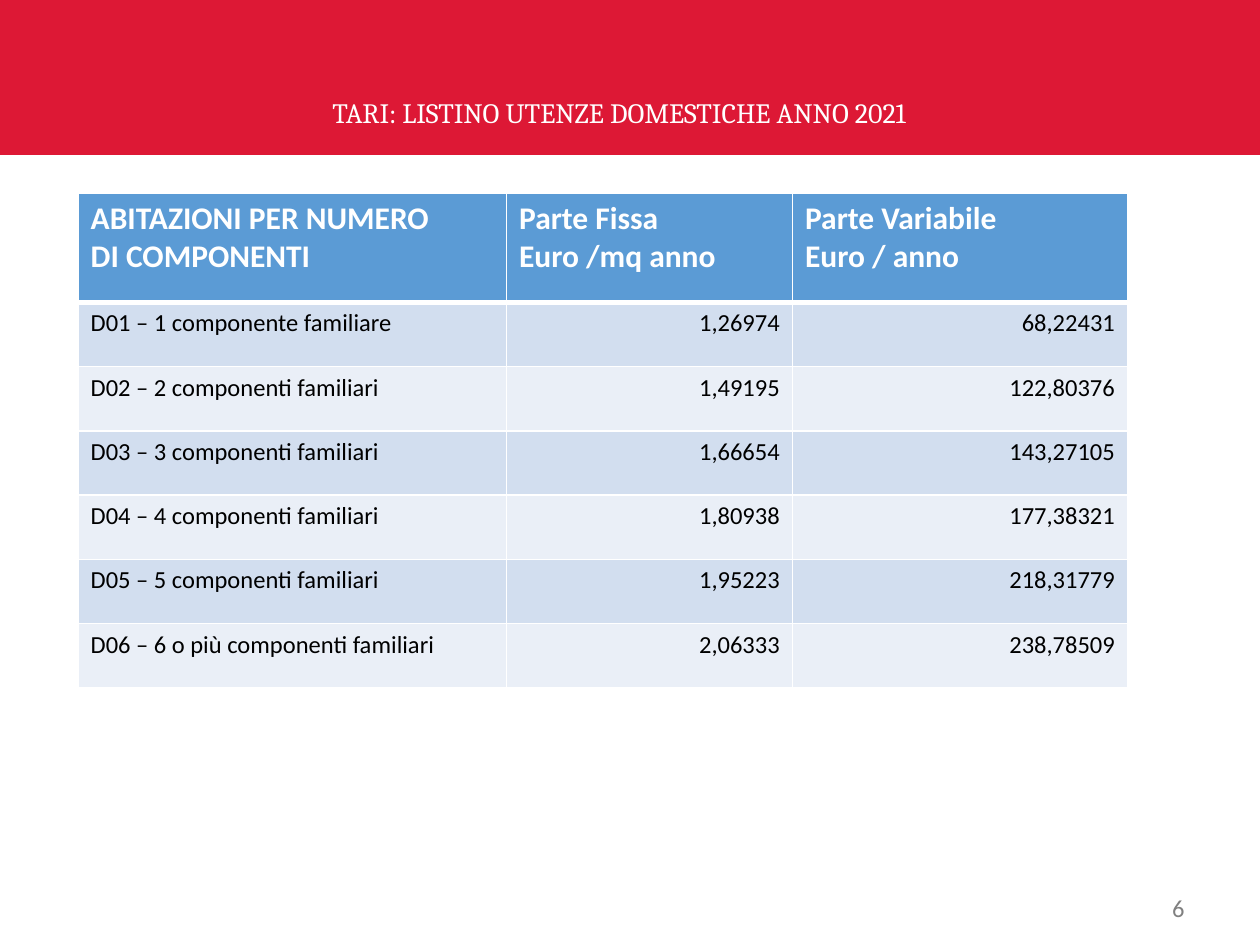
from lxml import etree
from pptx import Presentation
from pptx import util as u
from pptx.dml.color import RGBColor
from pptx.enum import shapes, text
from pptx.oxml.ns import qn

COLORS = {
    "banner": "DD1835", "white": "FFFFFF", "number": "808080",
    "header": "5B9BD5", "odd": "D2DEEF", "even": "EAEFF7", "ink": "000000",
}
WIDTH, HEIGHT = 10, 7.5
TITLE = "TARI: LISTINO UTENZE DOMESTICHE ANNO 2021"
PAGE_NUMBER = "6"
HEADERS = [
    ["ABITAZIONI PER NUMERO", "DI COMPONENTI"],
    ["Parte Fissa", "Euro /mq anno"],
    ["Parte Variabile", "Euro / anno"],
]
RATES = [
    ("D01 – 1 componente familiare", "1,26974", "68,22431"),
    ("D02 – 2 componenti familiari", "1,49195", "122,80376"),
    ("D03 – 3 componenti familiari", "1,66654", "143,27105"),
    ("D04 – 4 componenti familiari", "1,80938", "177,38321"),
    ("D05 – 5 componenti familiari", "1,95223", "218,31779"),
    ("D06 – 6 o più componenti familiari", "2,06333", "238,78509"),
]
COLUMN_WIDTHS = [3.4, 2.27, 2.66]
ROW_HEIGHTS = [0.87] + [0.51] * len(RATES)
TABLE_LEFT, TABLE_TOP = 0.62, 1.53
ALIGN = text.PP_ALIGN
FORMATS = {
    "title": {"name": "Cambria", "size": u.Pt(16), "color": "white"},
    "number": {"name": "Calibri", "size": u.Pt(14), "color": "number"},
    "header": {"name": "Calibri", "size": u.Pt(18), "bold": True, "color": "white"},
    "body": {"name": "Calibri", "size": u.Pt(14), "bold": False, "color": "ink"},
}


def rgb(name):
    return RGBColor.from_string(COLORS[name])


def write(frame, lines, style, **paragraph_format):
    for index, line in enumerate(lines):
        para = frame.add_paragraph() if index else frame.paragraphs[0]
        span = para.add_run()
        span.text = line
        for key, value in paragraph_format.items():
            setattr(para, key, value)
        for key, value in FORMATS[style].items():
            if key == "color":
                span.font.color.rgb = rgb(value)
            else:
                setattr(span.font, key, value)


def add_label(page, area, line, style, anchor, **paragraph_format):
    box = page.shapes.add_textbox(*map(u.Inches, area))
    box.text_frame.word_wrap = True
    box.text_frame.vertical_anchor = anchor
    write(box.text_frame, [line], style, **paragraph_format)


def set_borders(cell, top, bottom):
    properties = cell._tc.get_or_add_tcPr()
    for side, points in {"L": 1, "R": 1, "T": top, "B": bottom}.items():
        line = etree.SubElement(properties, qn(f"a:ln{side}"), w=str(u.Pt(points)))
        fill = etree.SubElement(line, qn("a:solidFill"))
        etree.SubElement(fill, qn("a:srgbClr"), val=COLORS["white"])


def add_rates(page):
    rows = [HEADERS] + [[[value] for value in rate] for rate in RATES]
    area = (TABLE_LEFT, TABLE_TOP, sum(COLUMN_WIDTHS), sum(ROW_HEIGHTS))
    table = page.shapes.add_table(
        len(rows), len(HEADERS), *map(u.Inches, area)).table
    for column, width in zip(table.columns, COLUMN_WIDTHS):
        column.width = u.Inches(width)
    for r, (row, height) in enumerate(zip(rows, ROW_HEIGHTS)):
        table.rows[r].height = u.Inches(height)
        style = "body" if r else "header"
        shade = ("even", "odd")[r % 2] if r else "header"
        for c, lines in enumerate(row):
            cell = table.cell(r, c)
            set_borders(cell, 3 if r == 1 else 1, 1 if r else 3)
            cell.fill.solid()
            cell.fill.fore_color.rgb = rgb(shade)
            side = ALIGN.RIGHT if r and c else ALIGN.LEFT
            write(cell.text_frame, lines, style, alignment=side)


def main():
    deck = Presentation()
    deck.slide_width, deck.slide_height = u.Inches(WIDTH), u.Inches(HEIGHT)
    page = deck.slides.add_slide(deck.slide_layouts[6])
    banner = page.shapes.add_shape(
        shapes.MSO_SHAPE.RECTANGLE, 0, 0, deck.slide_width, u.Inches(1.23))
    banner.shadow.inherit = False
    banner.fill.solid()
    banner.fill.fore_color.rgb = rgb("banner")
    banner.line.fill.background()
    add_label(page, (1.61, 0.6, 6.61, 0.48), TITLE, "title",
              text.MSO_ANCHOR.BOTTOM, alignment=ALIGN.CENTER, line_spacing=0.9)
    add_label(page, (7.17, 7.06, 2.33, 0.29), PAGE_NUMBER, "number",
              text.MSO_ANCHOR.MIDDLE, alignment=ALIGN.RIGHT)
    add_rates(page)
    deck.save("out.pptx")


if __name__ == "__main__":
    main()
